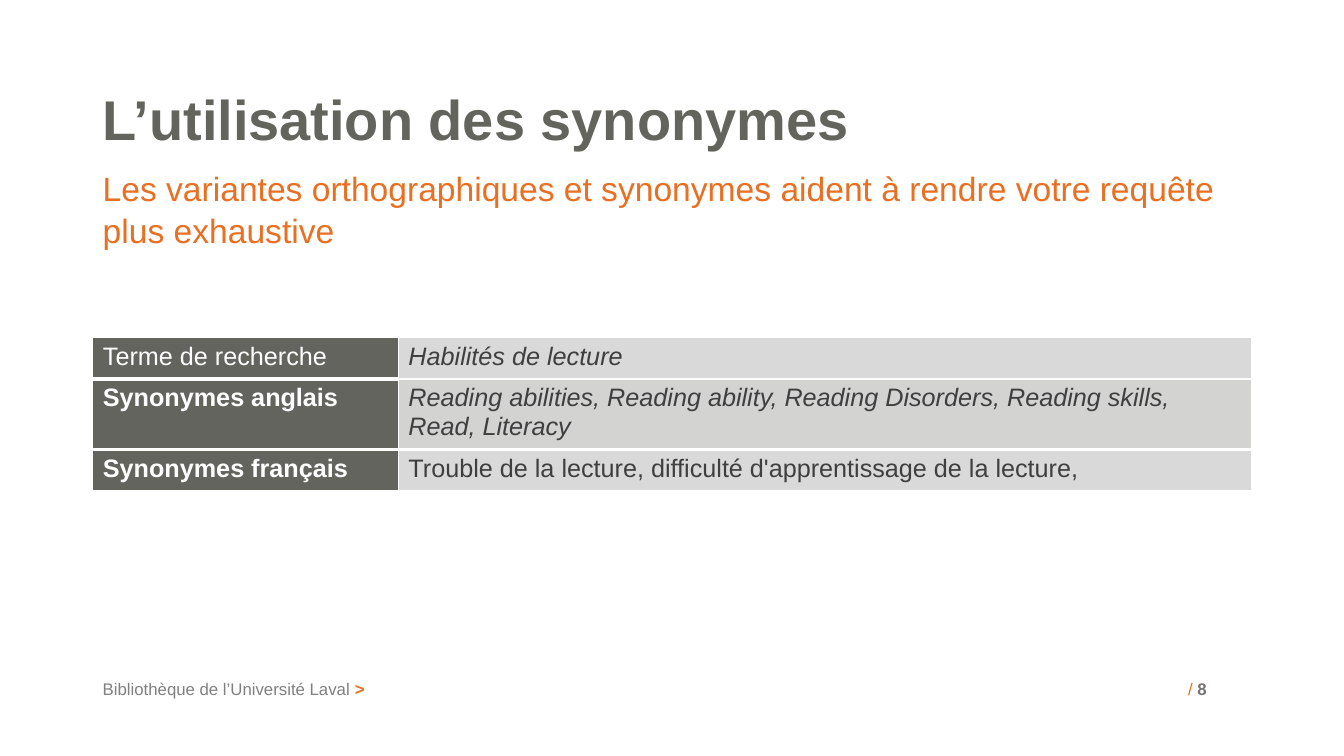
"""Build the slide on using synonyms in a library search."""
from lxml.etree import SubElement
from pptx import Presentation
from pptx.dml.color import RGBColor as RGB
from pptx.enum.text import MSO_ANCHOR as Anchor
from pptx.oxml.ns import qn
from pptx.util import Cm, Pt

WHITE = RGB(0xFF, 0xFF, 0xFF)
STONE = RGB(0x64, 0x64, 0x5F)
ORANGE = RGB(0xE9, 0x6F, 0x23)
INK = RGB(0x3F, 0x3F, 0x3F)
GREY = RGB(0x80, 0x80, 0x80)
SLATE = RGB(0x76, 0x71, 0x71)
LIGHT = RGB(0xD9, 0xD9, 0xD9)
MIDDLE = RGB(0xD3, 0xD3, 0xD2)
LEFT, WIDE = 2.34, 29.21


def write(para, text, size, color, bold=False, italic=False):
    run = para.add_run()
    run.text = text
    font = run.font
    font.name, font.size = "Arial", Pt(size)
    font.bold, font.italic = bold, italic
    font.color.rgb = color


def frame(left, top, width, height, anchor=Anchor.TOP):
    box = slide.shapes.add_textbox(Cm(left), Cm(top), Cm(width), Cm(height))
    box.text_frame.word_wrap = True
    box.text_frame.vertical_anchor = anchor
    return box.text_frame


deck = Presentation()
deck.slide_width, deck.slide_height = Cm(33.87), Cm(19.05)
slide = deck.slides.add_slide(deck.slide_layouts[6])

title = frame(LEFT, 2.21, WIDE, 1.75, Anchor.BOTTOM).paragraphs[0]
title.line_spacing = 0.9
write(title, "L’utilisation des synonymes", 40, STONE, bold=True)

lead = frame(LEFT, 4.04, WIDE, 2.44).paragraphs[0]
lead.line_spacing = 1.06
write(lead, "Les variantes orthographiques et synonymes aident à rendre "
      "votre requête plus exhaustive", 24, ORANGE)

footer = frame(LEFT, 16.92, 26.97, 1.02)
number = frame(29.69, 16.92, 1.83, 1.02)
for foot in (footer, number):
    foot.margin_top = Cm(0.19)
write(footer.paragraphs[0], "Bibliothèque de l’Université Laval ", 12, GREY)
write(footer.paragraphs[0], ">", 12, ORANGE, bold=True)
write(number.paragraphs[0], "/ ", 12, ORANGE)
write(number.paragraphs[0], "8", 12, SLATE, bold=True)

rows = [
    ("Terme de recherche", False, "Habilités de lecture", True, LIGHT, 1.04),
    ("Synonymes anglais", True, "Reading abilities, Reading ability, Reading "
     "Disorders, Reading skills, Read, Literacy", True, MIDDLE, 1.68),
    ("Synonymes français", True, "Trouble de la lecture, difficulté "
     "d'apprentissage de la lecture,", False, LIGHT, 1.04),
]
rules = [(1, 1), (3, 2.25), (2.25, 2.25), (1, 1)]
table = slide.shapes.add_table(
    len(rows), 2, Cm(LEFT), Cm(8.51), Cm(WIDE), Cm(3.76)).table
table.first_row = table.horz_banding = False
table.columns[0].width, table.columns[1].width = Cm(7.7), Cm(21.51)

for r, (term, bold, words, italic, shade, height) in enumerate(rows):
    table.rows[r].height = Cm(height)
    looks = [(term, STONE, WHITE, bold, False),
             (words, shade, INK, False, italic)]
    for c, (text, fill, color, heavy, slant) in enumerate(looks):
        cell = table.cell(r, c)
        props = cell._tc.get_or_add_tcPr()
        edges = {"L": 1, "R": 1, "T": rules[r][c], "B": rules[r + 1][c]}
        for side, width in edges.items():
            line = SubElement(props, qn(f"a:ln{side}"), w=str(Pt(width)))
            solid = SubElement(line, qn("a:solidFill"))
            SubElement(solid, qn("a:srgbClr"), val=str(WHITE))
        cell.fill.solid()
        cell.fill.fore_color.rgb = fill
        write(cell.text_frame.paragraphs[0], text, 18, color, heavy, slant)

deck.save("out.pptx")
